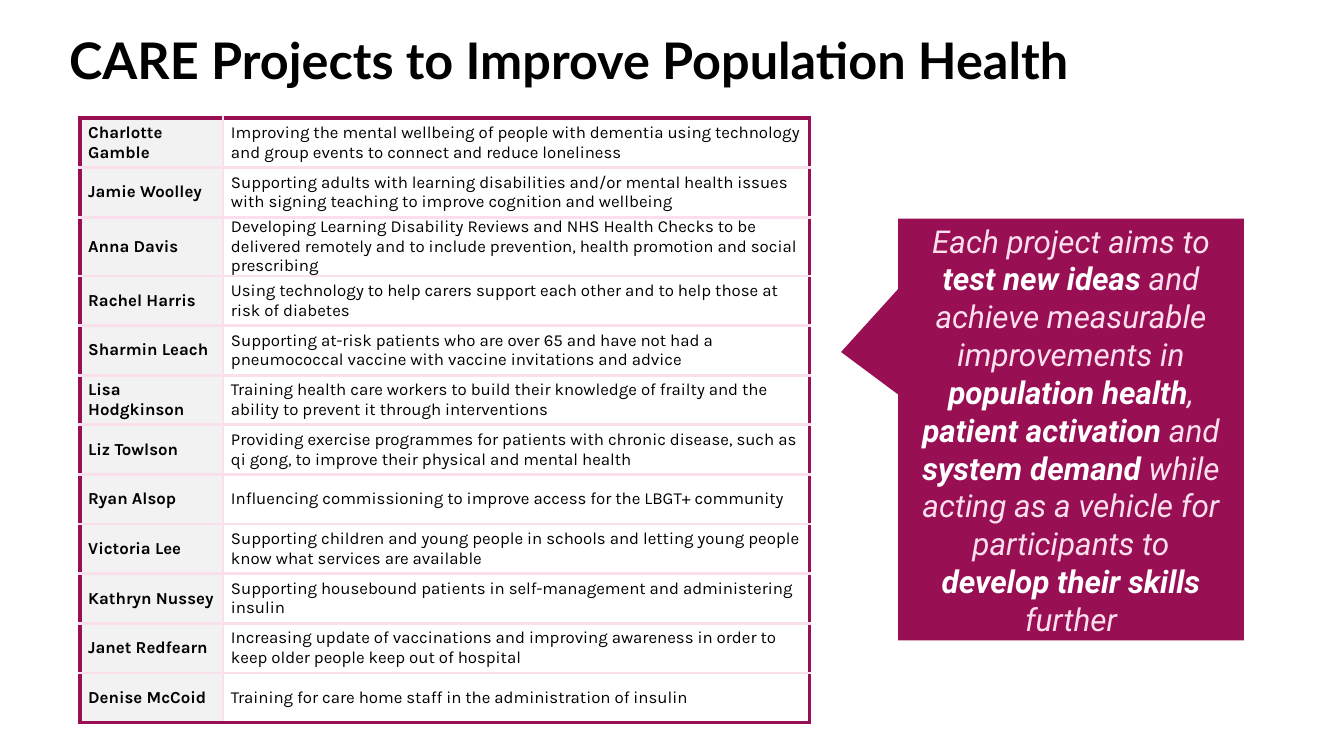
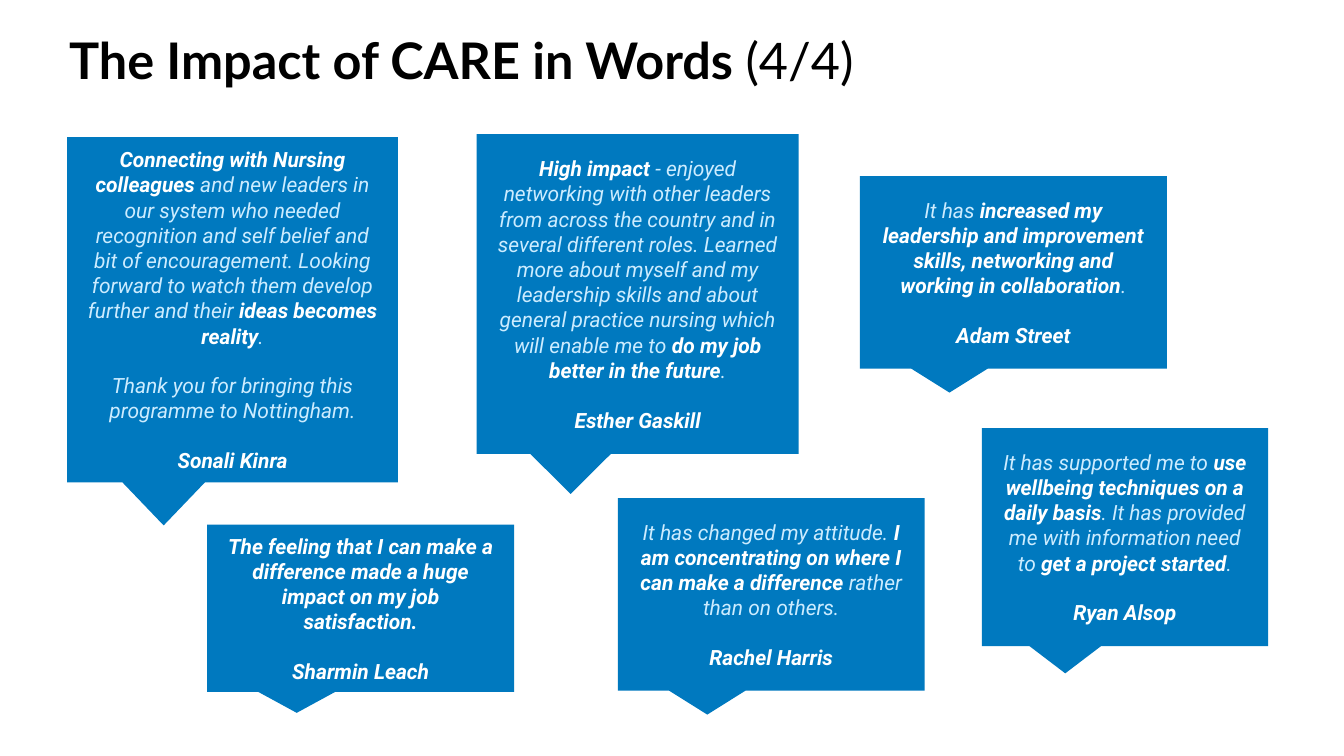
from dataclasses import dataclass

from lxml import etree
from pptx import Presentation
from pptx.dml.color import RGBColor
from pptx.enum.shapes import MSO_SHAPE
from pptx.enum.text import MSO_ANCHOR, MSO_AUTO_SIZE, PP_ALIGN
from pptx.oxml.ns import qn
from pptx.util import Pt

CALLOUT = MSO_SHAPE.RECTANGULAR_CALLOUT
MIDDLE = MSO_ANCHOR.MIDDLE
GROW, FIXED = MSO_AUTO_SIZE.SHAPE_TO_FIT_TEXT, MSO_AUTO_SIZE.NONE
LEFT, CENTER = PP_ALIGN.LEFT, PP_ALIGN.CENTER


@dataclass(frozen=True)
class Theme:
    black: str = "000000"
    white: str = "FFFFFF"
    plum: str = "980F54"
    pink: str = "FCDFED"
    grey: str = "F2F2F2"
    blue: str = "0079BF"
    ice: str = "CCECFF"
    title_font: str = "Lato"
    table_font: str = "Karla"
    callout_font: str = "Roboto"
    title_size: int = 72
    table_size: int = 24
    aim_size: int = 45
    quote_size: int = 30
    quote_gap: int = 35
    outer_line: float = 6
    inner_line: float = 4.5


theme = Theme()


def add_titled_slide(title_text, suffix=""):
    slide = prs.slides.add_slide(prs.slide_layouts[5])
    title = slide.shapes.title
    title.left, title.top, title.width, title.height = Pt(91.5), Pt(42.5), Pt(1654.5), Pt(85)
    frame = title.text_frame
    frame.word_wrap, frame.auto_size, frame.vertical_anchor = True, FIXED, MIDDLE
    heading = frame.paragraphs[0]
    heading.alignment = LEFT
    heading.font.name, heading.font.size = theme.title_font, Pt(theme.title_size)
    heading.font.color.rgb = RGBColor.from_string(theme.black)
    heading.font.bold = True
    heading.add_run().text = title_text
    if suffix:
        page_count = heading.add_run()
        page_count.text = suffix
        page_count.font.bold = False
    return slide


def add_callout(slide, box, fill, text_color, size, passages):
    """Add a speech bubble; words between ** marks are bold and white."""
    bubble = slide.shapes.add_shape(CALLOUT, *map(Pt, box))
    bubble.shadow.inherit = False
    bubble.fill.solid()
    bubble.fill.fore_color.rgb = RGBColor.from_string(fill)
    bubble.line.fill.background()
    frame = bubble.text_frame
    frame.word_wrap, frame.auto_size, frame.vertical_anchor = True, GROW, MIDDLE
    frame.margin_left = frame.margin_right = frame.margin_top = frame.margin_bottom = Pt(28)
    for number, passage in enumerate(passages):
        paragraph = frame.add_paragraph() if number else frame.paragraphs[0]
        paragraph.alignment = CENTER
        if number:
            paragraph.space_before = Pt(theme.quote_gap)
        paragraph.font.name, paragraph.font.size = theme.callout_font, Pt(size)
        paragraph.font.italic = True
        for part, words in enumerate(passage.split("**")):
            if words:
                run = paragraph.add_run()
                run.text = words
                run.font.bold = part % 2 == 1
                run.font.color.rgb = RGBColor.from_string(theme.white if part % 2 else text_color)
    return bubble


prs = Presentation()
prs.slide_width, prs.slide_height = Pt(1920), Pt(1080)

# Projects
projects_slide = add_titled_slide("CARE Projects to Improve Population Health")
projects = [
    ("Charlotte Gamble", "Improving the mental wellbeing of people with dementia using technology "
     "and group events to connect and reduce loneliness"),
    ("Jamie Woolley", "Supporting adults with learning disabilities and/or mental health issues "
     "with signing teaching to improve cognition and wellbeing"),
    ("Anna Davis", "Developing Learning Disability Reviews and NHS Health Checks to be delivered "
     "remotely and to include prevention, health promotion and social prescribing"),
    ("Rachel Harris", "Using technology to help carers support each other and to help those at "
     "risk of diabetes"),
    ("Sharmin Leach", "Supporting at-risk patients who are over 65 and have not had a "
     "pneumococcal vaccine with vaccine invitations and advice"),
    ("Lisa Hodgkinson", "Training health care workers to build their knowledge of frailty and the "
     "ability to prevent it through interventions"),
    ("Liz Towlson", "Providing exercise programmes for patients with chronic disease, such as "
     "qi gong, to improve their physical and mental health"),
    ("Ryan Alsop", "Influencing commissioning to improve access for the LBGT+ community"),
    ("Victoria Lee", "Supporting children and young people in schools and letting young people "
     "know what services are available"),
    ("Kathryn Nussey", "Supporting housebound patients in self-management and administering insulin"),
    ("Janet Redfearn", "Increasing update of vaccinations and improving awareness in order to "
     "keep older people keep out of hospital"),
    ("Denise McCoid", "Training for care home staff in the administration of insulin"),
]
row_height = 70.9
table = projects_slide.shapes.add_table(
    len(projects), 2, Pt(114.5), Pt(168.5), Pt(1042), Pt(row_height * len(projects))).table
table.first_row = table.horz_banding = False
table.columns[0].width, table.columns[1].width = Pt(204), Pt(838)
last_row = len(projects) - 1
for row, project in enumerate(projects):
    table.rows[row].height = Pt(row_height)
    for column, words in enumerate(project):
        cell = table.cell(row, column)
        cell.vertical_anchor = MIDDLE
        cell.margin_left = cell.margin_right = Pt(11.5)
        cell.margin_top = cell.margin_bottom = 0
        paragraph = cell.text_frame.paragraphs[0]
        paragraph.font.name, paragraph.font.size = theme.table_font, Pt(theme.table_size)
        paragraph.font.color.rgb = RGBColor.from_string(theme.black)
        paragraph.font.bold = column == 0
        paragraph.add_run().text = words

        on_outer_edge = {"lnL": column == 0, "lnR": column == 1,
                         "lnT": row == 0, "lnB": row == last_row}
        for side, outer in on_outer_edge.items():
            width = theme.outer_line if outer else theme.inner_line
            border = etree.SubElement(cell._tc.get_or_add_tcPr(), qn(f"a:{side}"), w=str(Pt(width)))
            line_fill = etree.SubElement(border, qn("a:solidFill"))
            etree.SubElement(line_fill, qn("a:srgbClr"), val=theme.plum if outer else theme.pink)
        if column == 0:
            cell.fill.solid()
            cell.fill.fore_color.rgb = RGBColor.from_string(theme.grey)
        else:
            cell.fill.background()

aim = add_callout(
    projects_slide, (1283, 312.5, 494, 602.5), theme.plum, theme.pink, theme.aim_size,
    ["Each project aims to **test new ideas **and achieve measurable improvements in "
     "**population health**, **patient activation **and **system demand **while acting as "
     "a vehicle for participants to **develop their skills** further"])
aim.adjustments[0], aim.adjustments[1] = -0.665, -0.184

# Participant quotes
quotes_slide = add_titled_slide("The Impact of CARE in Words ", "(4/4)")
quotes = [
    ((96, 196, 472.5, 493), [
        "**Connecting with Nursing colleagues **and new leaders in our system who needed "
        "recognition and self belief and bit of encouragement. Looking forward to watch them "
        "develop further and their **ideas becomes reality**.",
        "Thank you for bringing this programme to Nottingham.",
        "**Sonali Kinra**"]),
    ((681, 191.5, 460, 457), [
        "**High impact **- enjoyed networking with other leaders from across the country and in "
        "several different roles. Learned more about myself and my leadership skills and about "
        "general practice nursing which will enable me to **do my job better in the future**.",
        "**Esther Gaskill**"]),
    ((1228.5, 251.5, 438.5, 275), [
        "It has **increased my leadership and improvement skills, networking and working in "
        "collaboration**.",
        "**Adam Street**"]),
    ((296, 749.5, 438.5, 239), [
        "**The feeling that I can make a difference made a huge impact on my job satisfaction.**",
        "**Sharmin Leach**"]),
    ((882.5, 711.5, 438.5, 275), [
        "It has changed my attitude. **I am concentrating on where I can make a difference "
        "**rather than on others.",
        "**Rachel Harris**"]),
    ((1402.5, 611.5, 409, 311.5), [
        "It has supported me to **use wellbeing techniques on a daily basis**. It has provided me "
        "with information need to **get a project started**.",
        "**Ryan Alsop**"]),
]
for box, passages in quotes:
    add_callout(quotes_slide, box, theme.blue, theme.ice, theme.quote_size, passages)

prs.save("out.pptx")
